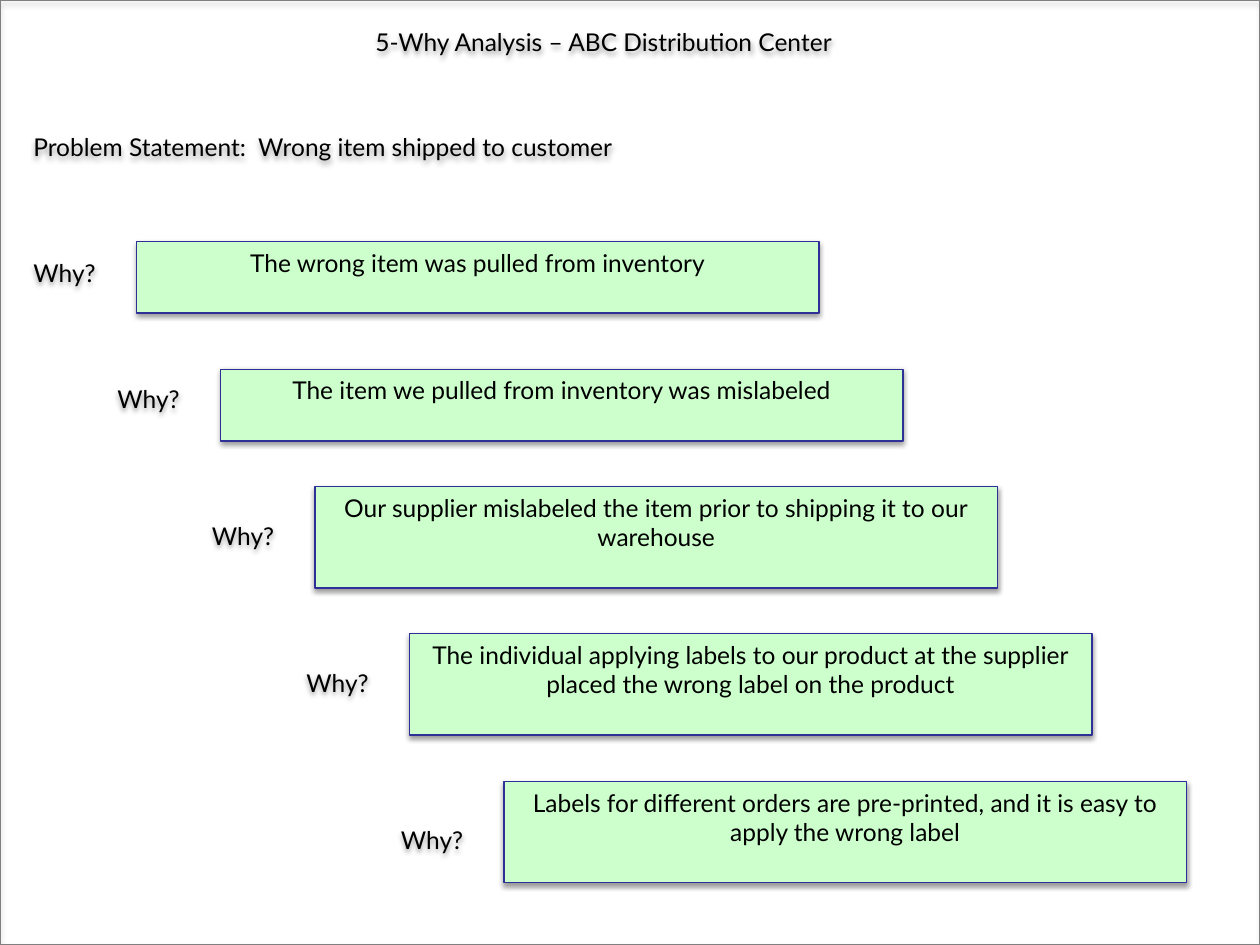
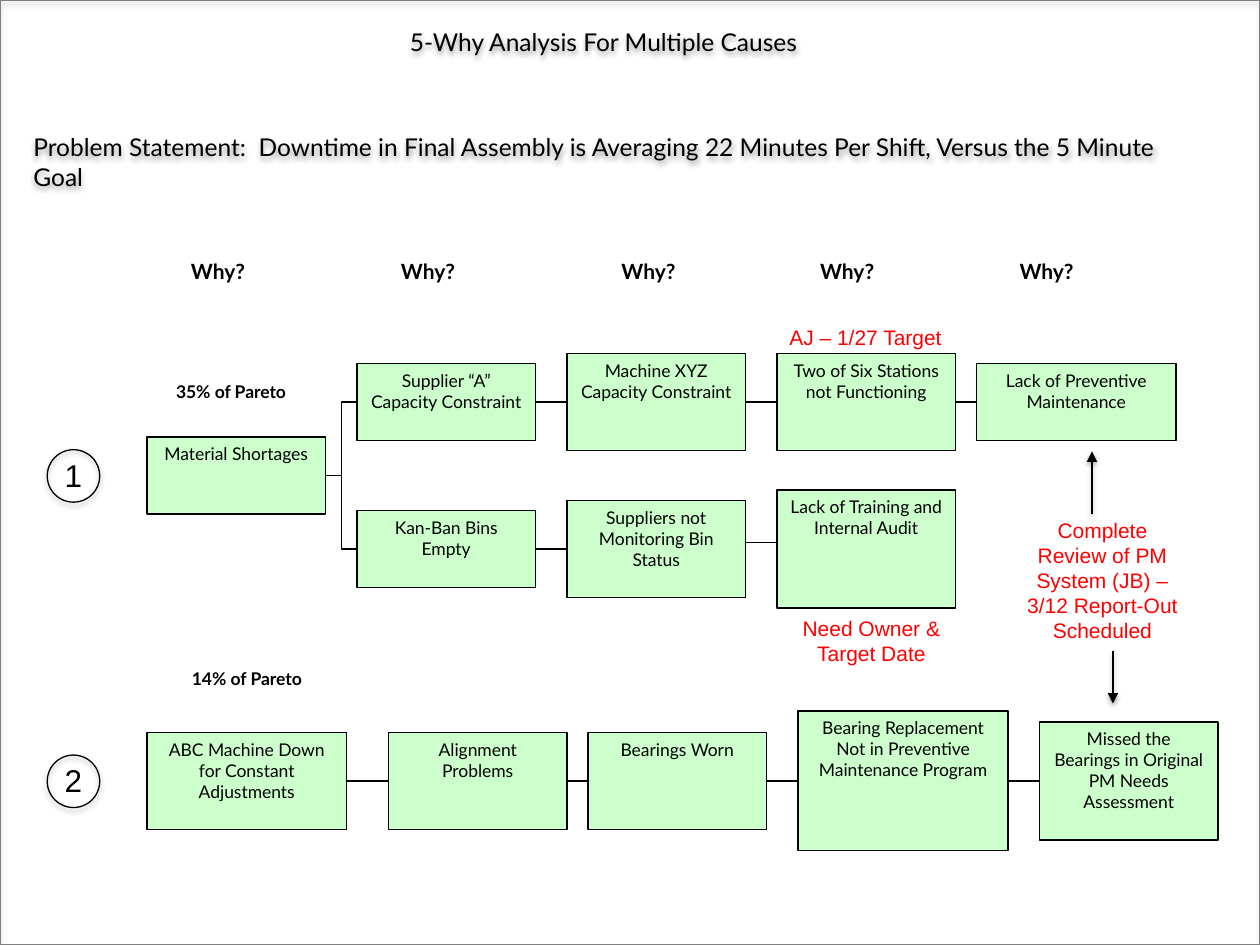
import dataclasses

import lxml.etree
import pptx
import pptx.dml.color
import pptx.enum.shapes
import pptx.enum.text
import pptx.oxml.ns
import pptx.util

Pt = pptx.util.Pt
SHAPE = pptx.enum.shapes.MSO_SHAPE
CONNECTOR = pptx.enum.shapes.MSO_CONNECTOR
ALIGN = pptx.enum.text.PP_ALIGN
RIGHT_SIDE, LEFT_SIDE = 3, 1


@dataclasses.dataclass(frozen=True)
class Theme:
    black: str = "000000"
    white: str = "FFFFFF"
    green: str = "CCFFCC"
    navy: str = "2F2F98"
    gray: str = "808080"
    red: str = "FF0000"
    font: str = "Lato"
    note_font: str = "Arial"
    heading: int = 14
    column: int = 12
    cause: int = 10
    number: int = 18
    line: float = 0.75


THEME = Theme()
SLIDE_WIDTH, SLIDE_HEIGHT = 720, 540

# Content of the single chain: answer, box left, top, height, label top
SINGLE_TITLE = "5-Why Analysis – ABC Distribution Center"
SINGLE_PROBLEM = "Problem Statement:  Wrong item shipped to customer"
WHY_CHAIN = [
    ("The wrong item was pulled from inventory", 78, 138, 41, 144),
    ("The item we pulled from inventory was mislabeled", 126, 211, 41, 216),
    ("Our supplier mislabeled the item prior to shipping it to our warehouse",
     180, 278, 58, 294),
    ("The individual applying labels to our product at the supplier placed "
     "the wrong label on the product", 234, 362, 58, 378),
    ("Labels for different orders are pre-printed, and it is easy to apply "
     "the wrong label", 288, 446.5, 58, 468),
]

# Content of the cause tree: each box has text, left, width, height
MULTIPLE_TITLE = "5-Why Analysis For Multiple Causes"
MULTIPLE_PROBLEM = ("Problem Statement:  Downtime in Final Assembly is Averaging "
                    "22 Minutes Per Shift, Versus the 5 Minute Goal")
WHY_COLUMNS = [102, 222, 348, 461.5, 575.5]
CAUSE_ROWS = {  # row name: (vertical centre, boxes)
    "shortage": (271.75, [("Material Shortages", 84, 102, 44)]),
    "supplier": (229.75, [
        ("Supplier “A” Capacity Constraint", 204, 102, 44),
        ("Machine XYZ Capacity Constraint", 324, 102, 55.5),
        ("Two of Six Stations not Functioning", 444, 102, 55.5),
        ("Lack of Preventive Maintenance", 558, 114, 44)]),
    "bins": (313.75, [
        ("Kan-Ban Bins Empty", 204, 102, 44),
        ("Suppliers not Monitoring Bin Status", 324, 102, 55.5),
        ("Lack of Training and Internal Audit", 444, 102, 67.5)]),
    "machine": (446.25, [
        ("ABC Machine Down for Constant Adjustments", 84, 114, 55.5),
        ("Alignment Problems", 222, 102, 55.5),
        ("Bearings Worn", 336, 102, 55.5),
        ("Bearing Replacement Not in Preventive Maintenance Program", 456, 120, 80),
        ("Missed the Bearings in Original PM Needs Assessment", 594, 102, 67.5)]),
}
PARETO_SHARES = [("35% of Pareto", (90, 214, 84, 32)),
                 ("14% of Pareto", (96, 378, 90, 32))]
CAUSE_NUMBERS = [("1", 257), ("2", 431.5)]
ACTIONS = [
    ("AJ – 1/27 Target", (444, 182, 108, 21.5), ALIGN.LEFT),
    ("Complete Review of PM System (JB) – 3/12 Report-Out Scheduled",
     (576, 292, 108, 80), ALIGN.CENTER),
    ("Need Owner & Target Date", (444, 348, 108, 36), ALIGN.CENTER),
]
ACTION_ARROWS = [(624, 294, 258), (636, 372, 402)]  # x, from y, to y


# Helpers
def color(value):
    return pptx.dml.color.RGBColor.from_string(value)


def points(values):
    return [Pt(value) for value in values]


def add_shadow(properties, alpha=38, distance=1.6):
    effects = properties.find(pptx.oxml.ns.qn("a:effectLst"))
    shadow = lxml.etree.SubElement(
        effects, pptx.oxml.ns.qn("a:outerShdw"), blurRad=str(Pt(3.1)),
        dist=str(Pt(distance)), dir="5400000", rotWithShape="0")
    black = lxml.etree.SubElement(shadow, pptx.oxml.ns.qn("a:srgbClr"), val=THEME.black)
    lxml.etree.SubElement(black, pptx.oxml.ns.qn("a:alpha"), val=str(alpha * 1000))


def write_text(shape, text, size=THEME.heading, font=THEME.font, ink=THEME.black,
               bold=False, align=ALIGN.LEFT, wrap=True, shadow=False):
    frame = shape.text_frame
    frame.text = text
    frame.word_wrap = wrap
    frame.auto_size = pptx.enum.text.MSO_AUTO_SIZE.NONE
    frame.vertical_anchor = pptx.enum.text.MSO_ANCHOR.TOP
    paragraph = frame.paragraphs[0]
    paragraph.alignment = align
    run_font = paragraph.runs[0].font
    run_font.name, run_font.size, run_font.bold = font, Pt(size), bold
    run_font.color.rgb = color(ink)
    if shadow:
        shape.shadow.inherit = False
        add_shadow(shape.element.spPr)
    return shape


def add_label(shapes, text, box, **text_format):
    return write_text(shapes.add_textbox(*points(box)), text, **text_format)


def add_outline(shapes, kind, box, fill=None, line=None):
    shape = shapes.add_shape(kind, *points(box))
    shape.shadow.inherit = False
    if fill:
        shape.fill.solid()
        shape.fill.fore_color.rgb = color(fill)
    else:
        shape.fill.background()
    if line:
        shape.line.color.rgb = color(line)
        shape.line.width = Pt(THEME.line)
    else:
        shape.line.fill.background()
    return shape


def add_line(shapes, start=(0, 0), end=(0, 0), kind=CONNECTOR.STRAIGHT, arrow=False):
    connector = shapes.add_connector(kind, *points(start + end))
    connector.line.color.rgb = color(THEME.black)
    connector.line.width = Pt(THEME.line)
    properties = connector.element.spPr
    lxml.etree.SubElement(properties, pptx.oxml.ns.qn("a:effectLst"))
    if arrow:
        lxml.etree.SubElement(connector.line._get_or_add_ln(),
                              pptx.oxml.ns.qn("a:tailEnd"), type="triangle")
        add_shadow(properties)
    return connector


def join_boxes(shapes, first, second, kind=CONNECTOR.STRAIGHT):
    connector = add_line(shapes, kind=kind)
    connector.begin_connect(first, RIGHT_SIDE)
    connector.end_connect(second, LEFT_SIDE)


def start_slide(presentation, title_text, title_box, problem):
    slide = presentation.slides.add_slide(presentation.slide_layouts[5])
    title = slide.shapes.title
    title.left, title.top, title.width, title.height = points(title_box)
    write_text(title, title_text, align=ALIGN.CENTER, shadow=True)
    add_label(slide.shapes, problem, (12, 72, 684, 41), shadow=True)
    frame = add_outline(slide.shapes, SHAPE.RECTANGLE,
                        (0, 0, SLIDE_WIDTH, SLIDE_HEIGHT), line=THEME.gray)
    add_shadow(frame.element.spPr, alpha=35, distance=1.8)
    return slide


# Slides
def build_single_chain(presentation):
    shapes = start_slide(presentation, SINGLE_TITLE, (150, 12, 390, 41),
                         SINGLE_PROBLEM).shapes
    for answer, left, top, height, label_top in WHY_CHAIN:
        box = add_outline(shapes, SHAPE.RECTANGLE, (left, top, 390, height),
                          fill=THEME.green, line=THEME.navy)
        add_shadow(box.element.spPr)
        write_text(box, answer, align=ALIGN.CENTER)
        add_label(shapes, "Why?", (left - 66, label_top, 72, 24.5), shadow=True)


def build_cause_tree(presentation):
    shapes = start_slide(presentation, MULTIPLE_TITLE, (108, 12, 474, 24.5),
                         MULTIPLE_PROBLEM).shapes
    for left in WHY_COLUMNS:
        add_label(shapes, "Why?", (left, 144, 59, 21.5), size=THEME.column, bold=True)

    # Pareto shares
    for text, box in PARETO_SHARES:
        add_label(shapes, text, box, size=THEME.cause, bold=True, align=ALIGN.CENTER)

    # Cause boxes, centred on their rows
    rows = {}
    for name, (center, causes) in CAUSE_ROWS.items():
        rows[name] = []
        for text, left, width, height in causes:
            box = add_outline(shapes, SHAPE.RECTANGLE,
                              (left, center - height / 2, width, height),
                              fill=THEME.green, line=THEME.black)
            rows[name].append(write_text(box, text, size=THEME.cause, align=ALIGN.CENTER))

    # Links between causes; the last bins link runs above the middle
    for branch in ("supplier", "bins"):
        join_boxes(shapes, rows["shortage"][0], rows[branch][0], CONNECTOR.ELBOW)
    for boxes in (rows["supplier"], rows["bins"][:2], rows["machine"]):
        for first, second in zip(boxes, boxes[1:]):
            join_boxes(shapes, first, second)
    add_line(shapes, (426, 310), (444, 310))

    # Numbered circles
    for number, top in CAUSE_NUMBERS:
        group = shapes.add_group_shape().shapes
        add_label(group, number, (29.75, top, 24.5, 29), size=THEME.number,
                  font=THEME.note_font, align=ALIGN.CENTER, wrap=False)
        circle = add_outline(group, SHAPE.OVAL, (27, top, 30, 30), line=THEME.black)
        add_shadow(circle.element.spPr, alpha=35, distance=1.8)

    # Actions and their arrows
    for text, box, align in ACTIONS:
        add_label(shapes, text, box, size=THEME.column, font=THEME.note_font,
                  ink=THEME.red, align=align)
    for x, start, end in ACTION_ARROWS:
        add_line(shapes, (x, start), (x, end), arrow=True)


def main():
    presentation = pptx.Presentation()
    presentation.slide_width, presentation.slide_height = Pt(SLIDE_WIDTH), Pt(SLIDE_HEIGHT)
    background = presentation.slide_master.background.fill
    background.solid()
    background.fore_color.rgb = color(THEME.white)
    build_single_chain(presentation)
    build_cause_tree(presentation)
    presentation.save("out.pptx")


if __name__ == "__main__":
    main()
